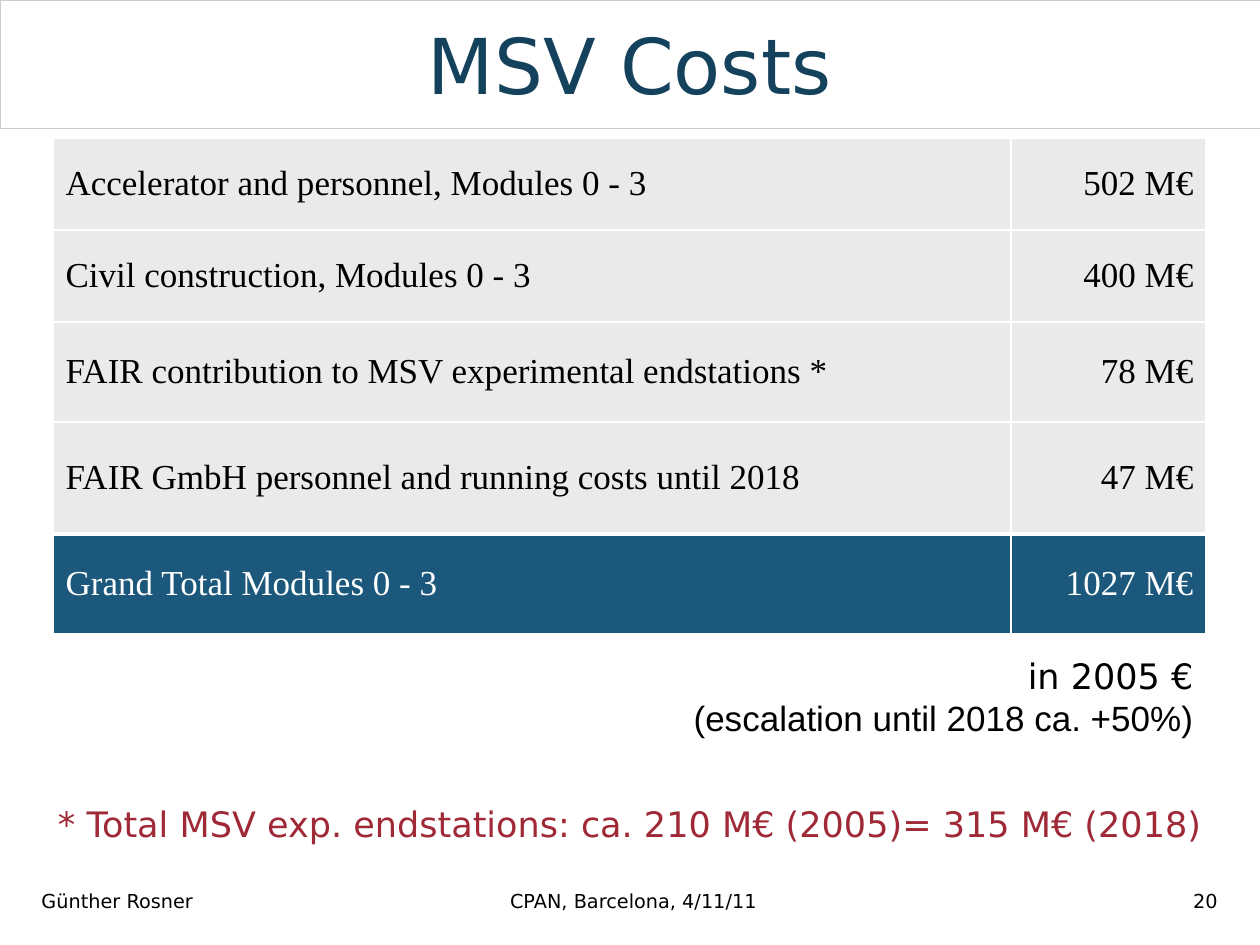
"""Build the MSV cost overview slide."""
from lxml.etree import SubElement
from pptx import Presentation
from pptx.dml.color import RGBColor
from pptx.enum.text import MSO_ANCHOR as Anchor, PP_ALIGN as Align
from pptx.oxml.ns import qn
from pptx.util import Emu, Pt

PX = 914400 / 126
BLACK = RGBColor(0x00, 0x00, 0x00)
WHITE = RGBColor(0xFF, 0xFF, 0xFF)
NAVY = RGBColor(0x14, 0x42, 0x5D)
BLUE = RGBColor(0x1B, 0x58, 0x7C)
RED = RGBColor(0x9F, 0x29, 0x36)
PALE = RGBColor(0xE8, 0xEA, 0xEC)
GREY = RGBColor(0xCC, 0xCC, 0xCC)
SANS, ARIAL, SERIF = "DejaVu Sans", "Arial", "Times New Roman"

COSTS = [
    ("Accelerator and personnel, Modules 0 - 3", "502 M€"),
    ("Civil construction, Modules 0 - 3", "400 M€"),
    ("FAIR contribution to MSV experimental endstations *", "78 M€"),
    ("FAIR GmbH personnel and running costs until 2018", "47 M€"),
    ("Grand Total Modules 0 - 3", "1027 M€"),
]
COLUMN_WIDTHS = [958, 195]
ROW_HEIGHTS = [92, 92, 100, 112, 100]
FOOTERS = [
    (29, 294, "Günther Rosner", Align.LEFT),
    (345, 577, "CPAN, Barcelona, 4/11/11", Align.CENTER),
    (936, 294, "20", Align.RIGHT),
]


def px(length):
    """Turn pixels into EMU."""
    return Emu(round(length * PX))


class SlideBuilder:
    """Hold the current slide and the shared text style."""

    def __init__(self, page):
        """Keep the page to draw on."""
        self.page = page

    def style_text(self, para, text, size, color=BLACK, align=Align.LEFT, font=SANS):
        """Fill one paragraph with styled text."""
        para.text = text
        para.alignment = align
        para.font.name = font
        para.font.size = Pt(size)
        para.font.color.rgb = color

    def title(self, text, width, height):
        """Place the title placeholder across the top."""
        box = self.page.shapes.title
        box.left, box.top, box.width, box.height = 0, 0, px(width), px(height)
        box.line.color.rgb = GREY
        box.line.width = Pt(0.25)
        box.text_frame.vertical_anchor = Anchor.MIDDLE
        self.style_text(box.text_frame.paragraphs[0], text, 44, NAVY, Align.CENTER)

    def text(self, left, top, width, height, lines, size, color=BLACK,
             align=Align.LEFT, anchor=Anchor.TOP):
        """Add a text box from (text, font) lines."""
        box = self.page.shapes.add_textbox(px(left), px(top), px(width), px(height))
        frame = box.text_frame
        frame.word_wrap = True
        frame.vertical_anchor = anchor
        for index, (line, font) in enumerate(lines):
            para = frame.add_paragraph() if index else frame.paragraphs[0]
            self.style_text(para, line, size, color, align, font)

    def borders(self, cell, top_width):
        """Draw white borders around a cell, before its fill is set."""
        properties = cell._tc.get_or_add_tcPr()
        for side, width in (("L", 1), ("R", 1), ("T", top_width), ("B", 1)):
            edge = SubElement(properties, qn(f"a:ln{side}"), w=str(int(Pt(width))))
            solid = SubElement(edge, qn("a:solidFill"))
            SubElement(solid, qn("a:srgbClr"), val=str(WHITE))

    def table(self, left, top, rows):
        """Add the cost table with its last row as the total."""
        frame = self.page.shapes.add_table(
            len(rows), len(COLUMN_WIDTHS), px(left), px(top),
            px(sum(COLUMN_WIDTHS)), px(sum(ROW_HEIGHTS)))
        table = frame.table
        table.first_row = table.horz_banding = False
        for column, width in zip(table.columns, COLUMN_WIDTHS):
            column.width = px(width)
        for index, (row, height, values) in enumerate(zip(table.rows, ROW_HEIGHTS, rows)):
            row.height = px(height)
            total = index == len(rows) - 1
            for cell, value, align in zip(row.cells, values, (Align.LEFT, Align.RIGHT)):
                self.borders(cell, 3 if total else 1)
                cell.fill.solid()
                cell.fill.fore_color.rgb = BLUE if total else PALE
                cell.vertical_anchor = Anchor.MIDDLE
                self.style_text(cell.text_frame.paragraphs[0], value, 20,
                                WHITE if total else BLACK, align, SERIF)


def main():
    """Build and save the deck."""
    deck = Presentation()
    deck.slide_width, deck.slide_height = px(1260), px(945)
    builder = SlideBuilder(deck.slides.add_slide(deck.slide_layouts[5]))
    builder.title("MSV Costs", 1260, 128)
    for left, width, text, align in FOOTERS:
        builder.text(left, 876, width, 50, [(text, SANS)], 11,
                     align=align, anchor=Anchor.MIDDLE)
    builder.table(53, 138, COSTS)
    builder.text(665, 648, 541, 97,
                 [("in 2005 €", SANS), ("(escalation until 2018 ca. +50%)", ARIAL)],
                 20, align=Align.RIGHT)
    builder.text(0, 796, 1260, 55,
                 [("* Total MSV exp. endstations: ca. 210 M€ (2005)= 315 M€ (2018)", SANS)],
                 20, RED, Align.CENTER)
    deck.save("out.pptx")


if __name__ == "__main__":
    main()
